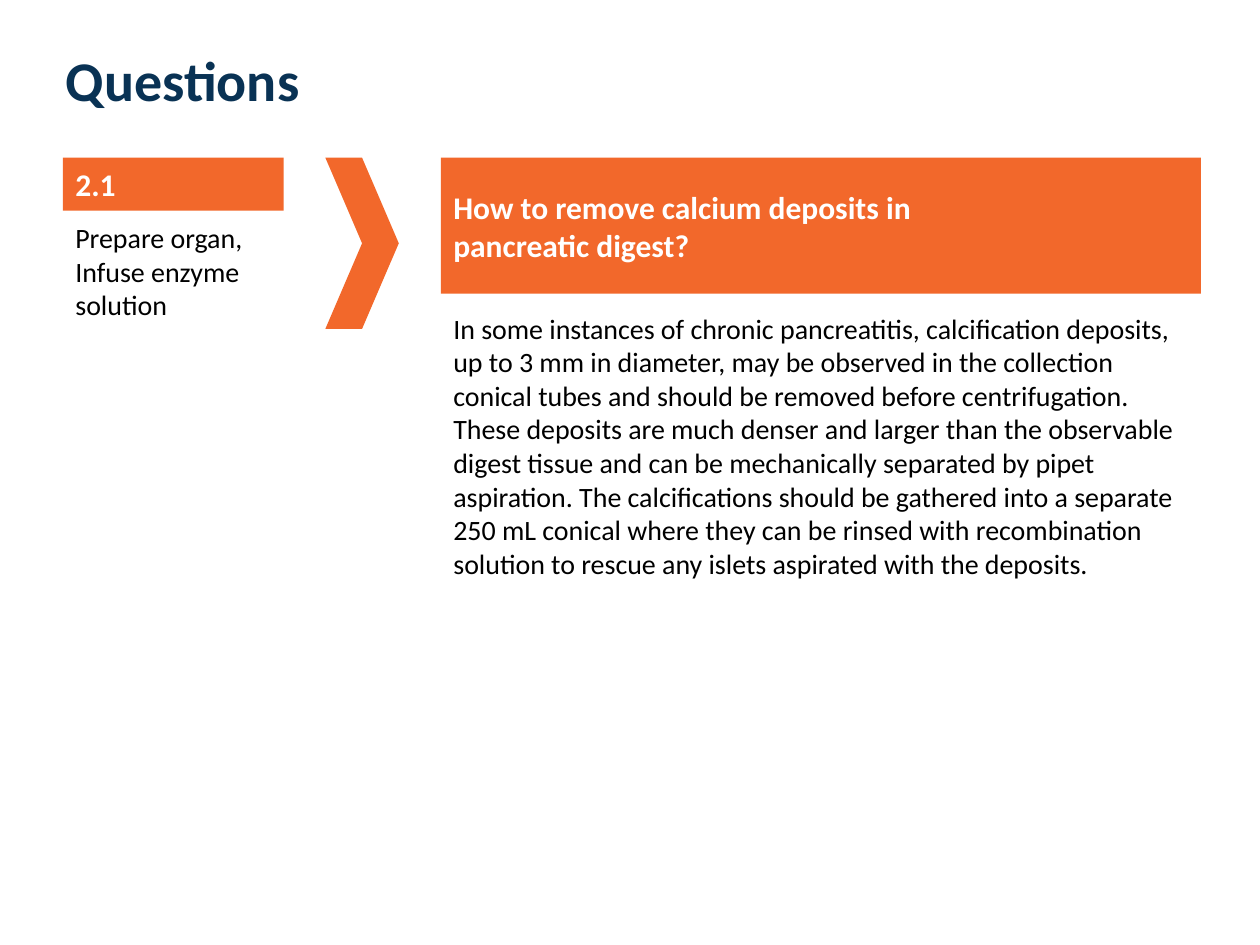
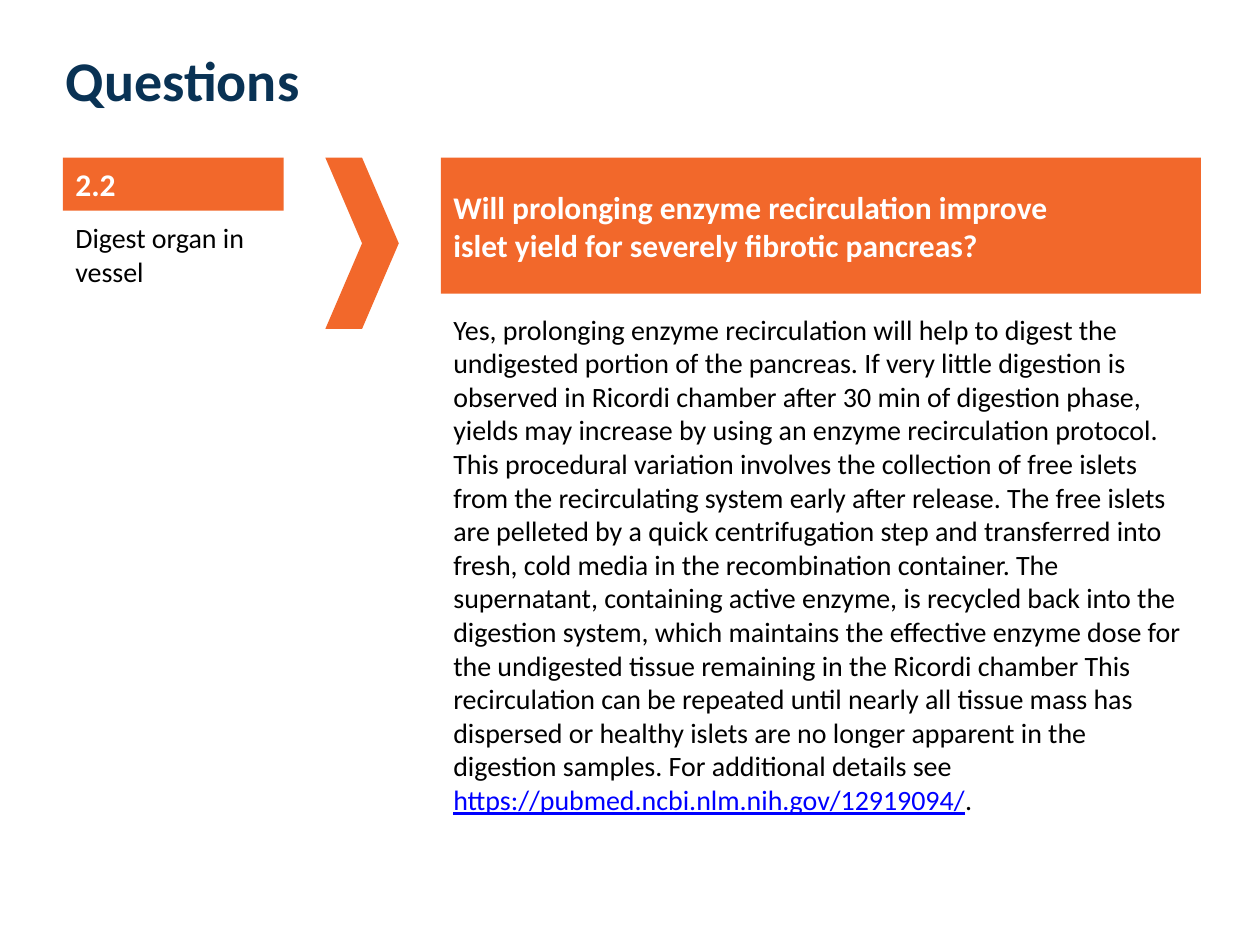
from pptx import Presentation
from pptx.dml.color import RGBColor
from pptx.enum.shapes import MSO_SHAPE
from pptx.enum.text import MSO_ANCHOR, PP_ALIGN
from pptx.util import Cm, Pt

COLORS = {
    "navy": "093254",
    "orange": "F2682B",
    "white": "FFFFFF",
    "black": "000000",
    "link": "0000FF",
}

TITLE_STYLE = {"size": Pt(32), "bold": True, "color": "navy"}
BAND_STYLE = {"size": Pt(18), "bold": True, "color": "white"}
TEXT_STYLE = {"size": Pt(16), "bold": False, "color": "black"}
LINK_STYLE = {**TEXT_STYLE, "underline": True, "color": "link"}

TOP = Cm(3.18)
STEP_LEFT, STEP_WIDTH = Cm(1.27), Cm(4.45)
ANSWER_LEFT, ANSWER_WIDTH = Cm(8.89), Cm(15.32)

TITLE_BOX = (Cm(1.07), Cm(0), Cm(22.86), Cm(3.18))
STEP_BAND_BOX = (STEP_LEFT, TOP, STEP_WIDTH, Cm(1.07))
STEP_TEXT_BOX = (STEP_LEFT, Cm(4.32), STEP_WIDTH, Cm(2.31))
CHEVRON_BOX = (Cm(6.56), TOP, Cm(1.48), Cm(3.45))
QUESTION_BOX = (ANSWER_LEFT, TOP, ANSWER_WIDTH, Cm(2.74))

QUESTIONS = [
    {
        "number": "2.1",
        "step": "Prepare organ, Infuse enzyme solution",
        "question": ["How to remove calcium deposits in", "pancreatic digest?"],
        "answer_top": Cm(6.15),
        "answer_height": Cm(5.74),
        "answer": [(
            "In some instances of chronic pancreatitis, calcification deposits, "
            "up to 3 mm in diameter, may be observed in the collection conical "
            "tubes and should be removed before centrifugation. These deposits "
            "are much denser and larger than the observable digest tissue and "
            "can be mechanically separated by pipet aspiration. The "
            "calcifications should be gathered into a separate 250 mL conical "
            "where they can be rinsed with recombination solution to rescue any "
            "islets aspirated with the deposits.", TEXT_STYLE)],
    },
    {
        "number": "2.2",
        "step": "Digest organ in vessel",
        "question": ["Will prolonging enzyme recirculation improve",
                     "islet yield for severely fibrotic pancreas?"],
        "answer_top": Cm(6.17),
        "answer_height": Cm(10.52),
        "answer": [
            ("Yes, prolonging enzyme recirculation will help to digest the "
             "undigested portion of the pancreas. If very little digestion is "
             "observed in Ricordi chamber after 30 min of digestion phase, "
             "yields may increase by using an enzyme recirculation protocol. "
             "This procedural variation involves the collection of free islets "
             "from the recirculating system early after release. ", TEXT_STYLE),
            ("The free islets are pelleted by a quick centrifugation step and "
             "transferred into fresh, cold media in the recombination "
             "container. The supernatant, containing active enzyme, is recycled "
             "back into the digestion system, which maintains the effective "
             "enzyme dose for the undigested tissue remaining in the Ricordi "
             "chamber This recirculation can be repeated until nearly all "
             "tissue mass has dispersed or healthy islets are no longer "
             "apparent in the digestion samples. For additional details see ",
             TEXT_STYLE),
            ("https://pubmed.ncbi.nlm.nih.gov/12919094/", LINK_STYLE),
            (".", TEXT_STYLE),
        ],
    },
]


def color(name):
    return RGBColor.from_string(COLORS[name])


def place(shape, box):
    for name, value in zip(("left", "top", "width", "height"), box):
        setattr(shape, name, value)


def format_run(run, style):
    run.font.name = "Calibri"
    for name, value in style.items():
        if name == "color":
            run.font.color.rgb = color(value)
        else:
            setattr(run.font, name, value)


def write(shape, lines, anchor):
    frame = shape.text_frame
    frame.word_wrap = True
    frame.vertical_anchor = anchor
    paragraph = frame.paragraphs[0]
    paragraph.alignment = PP_ALIGN.LEFT
    for index, line in enumerate(lines):
        if index:
            paragraph.add_line_break()
        for text, style in line:
            run = paragraph.add_run()
            run.text = text
            format_run(run, style)


def add_title(slide, text):
    title = slide.shapes.title
    place(title, TITLE_BOX)
    write(title, [[(text, TITLE_STYLE)]], MSO_ANCHOR.MIDDLE)


def add_orange_shape(slide, kind, box):
    shape = slide.shapes.add_shape(kind, *box)
    shape.shadow.inherit = False
    shape.fill.solid()
    shape.fill.fore_color.rgb = color("orange")
    shape.line.fill.background()
    return shape


def add_band(slide, box, lines):
    band = add_orange_shape(slide, MSO_SHAPE.RECTANGLE, box)
    write(band, [[(line, BAND_STYLE)] for line in lines], MSO_ANCHOR.MIDDLE)


def add_text(slide, box, runs):
    write(slide.shapes.add_textbox(*box), [runs], MSO_ANCHOR.TOP)


def add_question_slide(presentation, entry):
    slide = presentation.slides.add_slide(presentation.slide_layouts[5])
    add_title(slide, "Questions")
    add_band(slide, STEP_BAND_BOX, [entry["number"]])
    add_orange_shape(slide, MSO_SHAPE.CHEVRON, CHEVRON_BOX)
    answer_box = (ANSWER_LEFT, entry["answer_top"],
                  ANSWER_WIDTH, entry["answer_height"])
    add_text(slide, answer_box, entry["answer"])
    add_text(slide, STEP_TEXT_BOX, [(entry["step"], TEXT_STYLE)])
    add_band(slide, QUESTION_BOX, entry["question"])


def main():
    presentation = Presentation()
    presentation.slide_width = Cm(25.4)
    presentation.slide_height = Cm(19.05)
    for entry in QUESTIONS:
        add_question_slide(presentation, entry)
    presentation.save("out.pptx")


if __name__ == "__main__":
    main()
